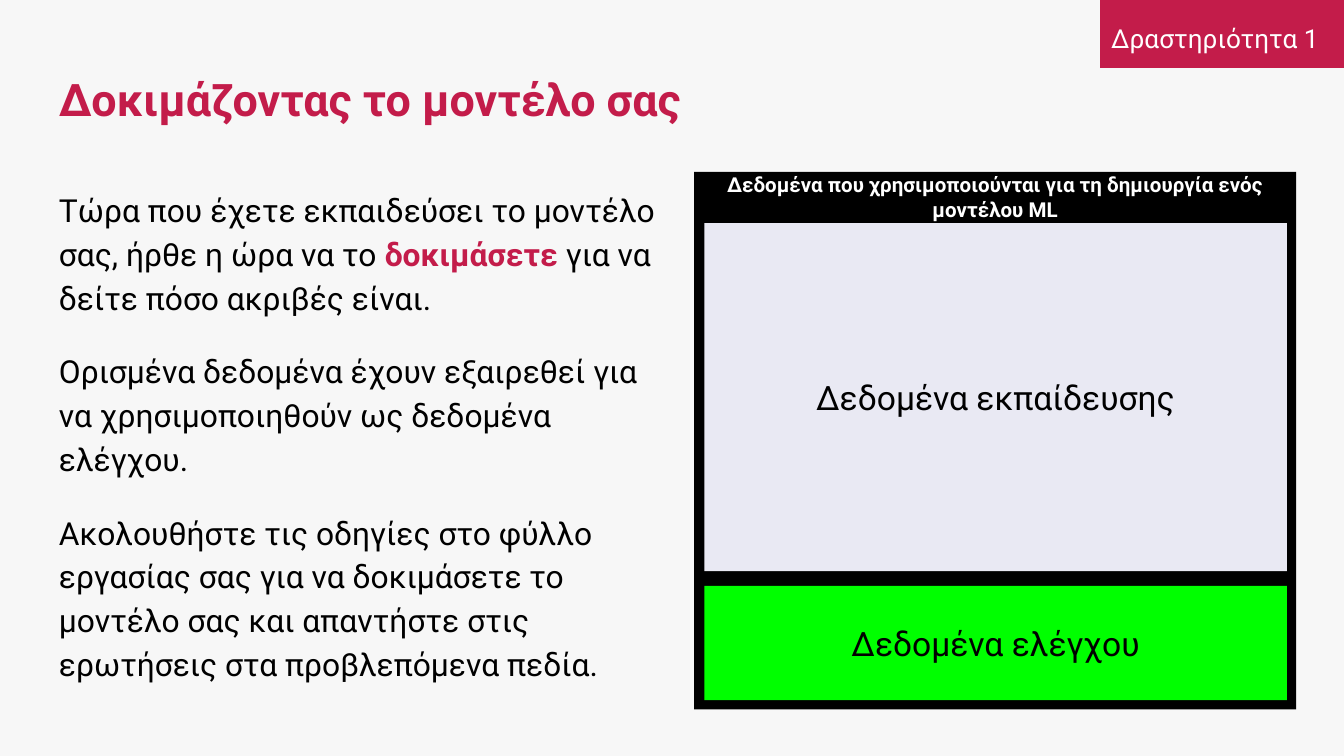
from dataclasses import dataclass, field

from pptx import Presentation
from pptx.dml.color import RGBColor
from pptx.enum.shapes import MSO_SHAPE
from pptx.enum.text import MSO_ANCHOR, PP_ALIGN
from pptx.slide import Slide
from pptx.util import Emu, Pt

RECT = MSO_SHAPE.RECTANGLE
TOP, MIDDLE = MSO_ANCHOR.TOP, MSO_ANCHOR.MIDDLE
LEFT, CENTER = PP_ALIGN.LEFT, PP_ALIGN.CENTER
SCALE = 4572  # EMU per px, 200 px to the inch
PAD = 20


@dataclass(frozen=True)
class Theme:
    font: str = "Roboto"
    page: str = "F7F7F7"
    red: str = "C31C4A"
    black: str = "000000"
    white: str = "FFFFFF"
    lilac: str = "E9E9F3"
    green: str = "00FF00"
    title: int = 24
    label: int = 18
    body: int = 17
    tag: int = 14
    head: int = 11


THEME = Theme()


@dataclass(frozen=True)
class Run:
    text: str
    size: int
    color: str = THEME.black
    bold: bool = False


@dataclass(frozen=True)
class Box:
    left: int
    top: int
    width: int
    height: int
    paras: list[list[Run]] = field(default_factory=list)
    fill: str | None = None
    anchor: MSO_ANCHOR = MIDDLE
    align: PP_ALIGN = CENTER
    inset: int = PAD  # top inset
    format: dict = field(default_factory=dict)  # paragraph values


def px(size: int) -> Emu:
    return Emu(size * SCALE)


def apply(target: object, values: dict) -> None:
    for name, value in values.items():
        setattr(target, name, value)


def draw(slide: Slide, box: Box) -> None:
    place = [px(n) for n in (box.left, box.top, box.width, box.height)]
    if box.fill:
        shape = slide.shapes.add_shape(RECT, *place)
        shape.shadow.inherit = False
        shape.fill.solid()
        shape.fill.fore_color.rgb = RGBColor.from_string(box.fill)
        shape.line.fill.background()
    else:
        shape = slide.shapes.add_textbox(*place)

    frame = shape.text_frame
    apply(frame, {
        "word_wrap": True,
        "vertical_anchor": box.anchor,
        "margin_left": px(PAD),
        "margin_right": px(PAD),
        "margin_top": px(box.inset),
        "margin_bottom": px(PAD),
    })
    for i, runs in enumerate(box.paras):
        para = frame.add_paragraph() if i else frame.paragraphs[0]
        apply(para, {"alignment": box.align, **box.format})
        if i == 0:
            para.space_before = Pt(0)
        for run in runs:
            part = para.add_run()
            part.text = run.text
            apply(part.font, {"name": THEME.font, "size": Pt(run.size), "bold": run.bold})
            part.font.color.rgb = RGBColor.from_string(run.color)


# Text
BODY = [
    [
        Run("Τώρα που έχετε εκπαιδεύσει το μοντέλο σας, ήρθε η ώρα να το ", THEME.body),
        Run("δοκιμάσετε", THEME.body, THEME.red, True),
        Run(" για να δείτε πόσο ακριβές είναι.", THEME.body),
    ],
    [Run("Ορισμένα δεδομένα έχουν εξαιρεθεί για να χρησιμοποιηθούν ως "
         "δεδομένα ελέγχου.", THEME.body)],
    [Run("Ακολουθήστε τις οδηγίες στο φύλλο εργασίας σας για να δοκιμάσετε "
         "το μοντέλο σας και απαντήστε στις ερωτήσεις στα προβλεπόμενα πεδία.",
         THEME.body)],
]
TITLE = Run("Δοκιμάζοντας το μοντέλο σας", THEME.title, THEME.red, True)
HEAD = Run("Δεδομένα που χρησιμοποιούνται για τη δημιουργία ενός μοντέλου ML",
           THEME.head, THEME.white, True)
TRAIN = Run("Δεδομένα εκπαίδευσης", THEME.label)
TEST = Run("Δεδομένα ελέγχου", THEME.label)
TAG = Run("Δραστηριότητα 1", THEME.tag, THEME.white)

# Boxes, back to front
BOXES = [
    Box(1637, 0, 363, 101, fill=THEME.red),
    Box(68, 256, 930, 800, BODY, anchor=TOP, align=LEFT,
        format={"line_spacing": 1.15, "space_before": Pt(16)}),
    Box(68, 71, 1864, 152, [[TITLE]], align=LEFT),
    Box(1033, 256, 896, 800, [[HEAD]], THEME.black, TOP, inset=0),
    Box(1048, 332, 867, 518, [[TRAIN]], THEME.lilac),
    Box(1048, 872, 867, 170, [[TEST]], THEME.green),
    Box(1633, 6, 350, 84, [[TAG]], anchor=TOP,
        format={"line_spacing": 1.15, "space_after": Pt(16)}),
]


def main() -> None:
    deck = Presentation()
    apply(deck, {"slide_width": px(2000), "slide_height": px(1125)})
    slide = deck.slides.add_slide(deck.slide_layouts[6])
    slide.background.fill.solid()
    slide.background.fill.fore_color.rgb = RGBColor.from_string(THEME.page)
    for box in BOXES:
        draw(slide, box)
    deck.save("out.pptx")


if __name__ == "__main__":
    main()
